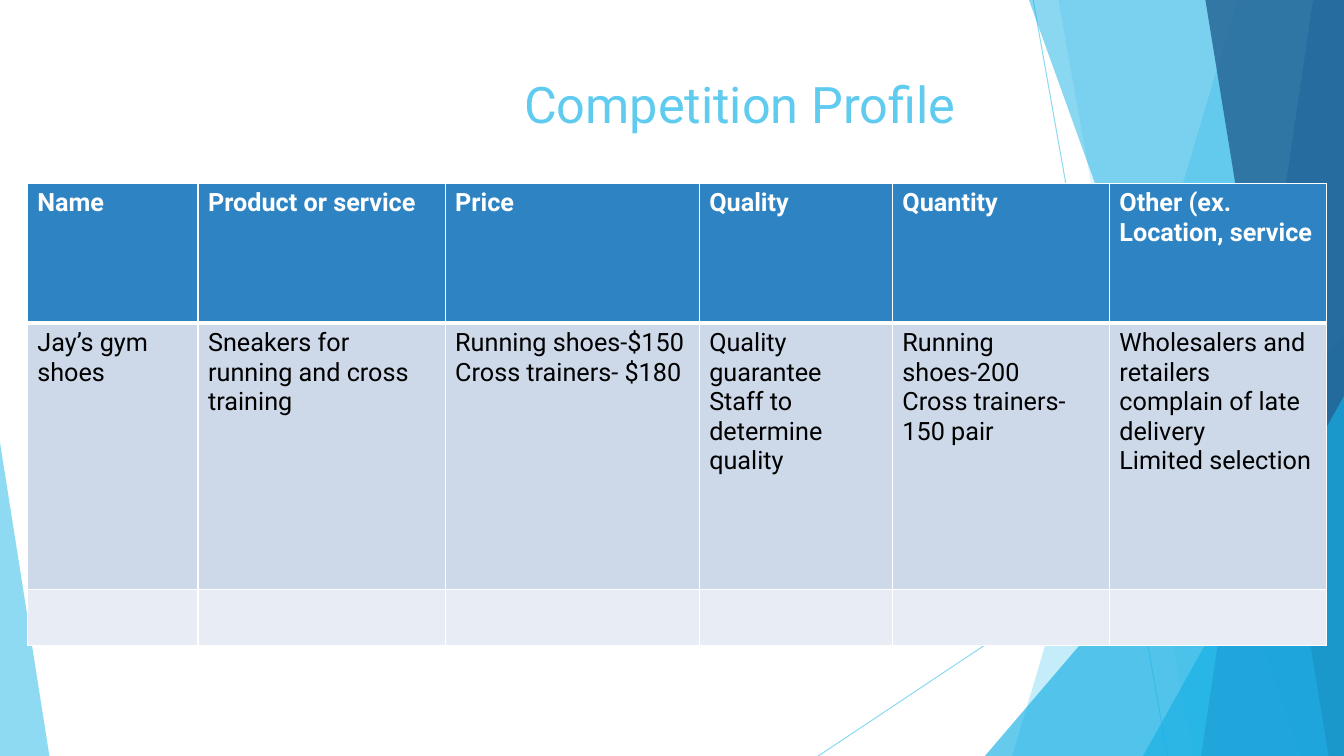
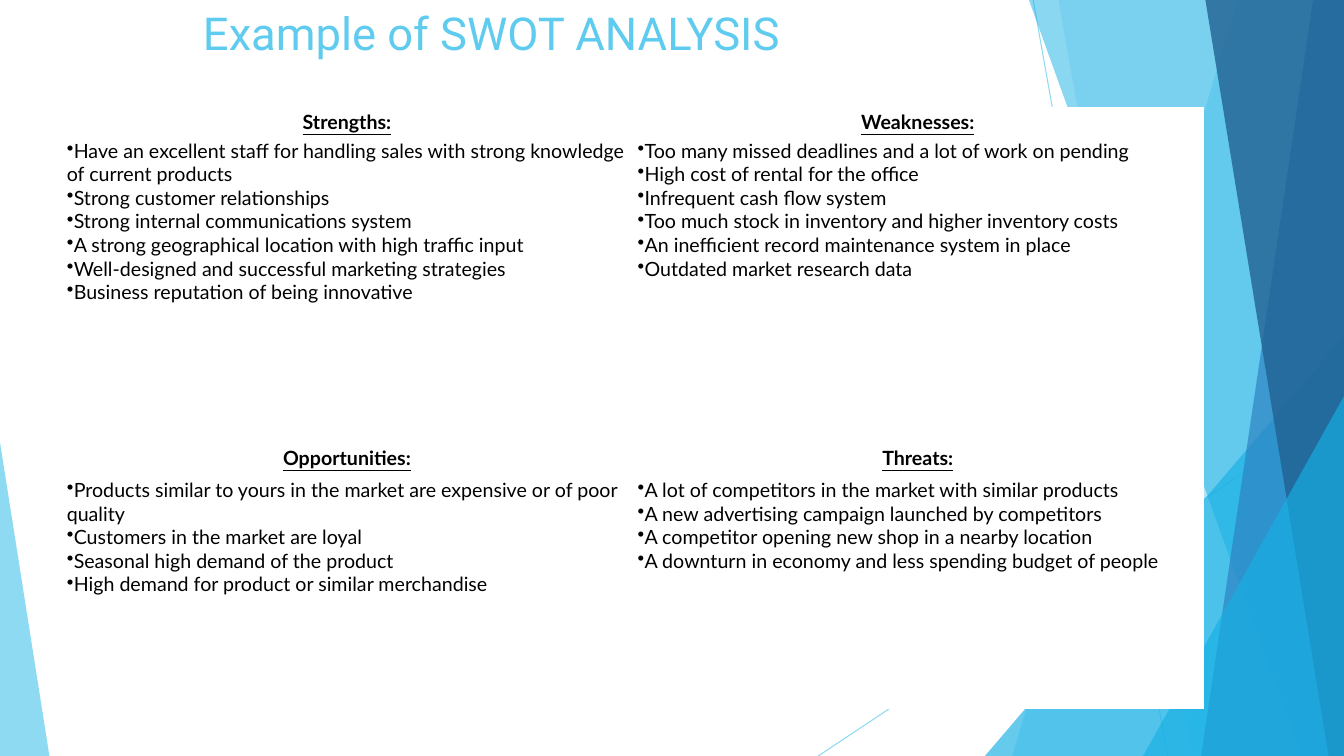
from lxml import etree
from pptx import Presentation
from pptx.dml.color import RGBColor
from pptx.enum.shapes import MSO_CONNECTOR, MSO_SHAPE
from pptx.enum.text import MSO_ANCHOR, PP_ALIGN
from pptx.oxml.ns import qn
from pptx.util import Pt

STRAIGHT = MSO_CONNECTOR.STRAIGHT
TRIANGLE = MSO_SHAPE.ISOSCELES_TRIANGLE
TOP = MSO_ANCHOR.TOP
LEFT, CENTER = PP_ALIGN.LEFT, PP_ALIGN.CENTER

WIDTH, HEIGHT = 960, 540
COLORS = {
    "sky": "5FCBEF",
    "cyan": "17B0E4",
    "blue": "2E83C3",
    "navy": "226292",
    "band": "CDD9E9",
    "pale": "E8EDF5",
    "white": "FFFFFF",
    "black": "000000",
}
TITLE_FONT, SWOT_FONT = "Roboto", "Lato"

RAYS = [(738, 0, 834, HEIGHT), (WIDTH, 290, 584.5, HEIGHT)]
FACETS = [
    ("shard", (884, 723), "sky", 36),
    ("shard", (756, 852), "sky", 20),
    ("triangle", (703.5, 240, 256.5, 300, 1), "cyan", 66),
    ("shard", (735, 929.5), "cyan", 50),
    ("shard", (938, 858), "blue", 70),
    ("shard", (861, 949), "navy", 80),
    ("triangle", (816.5, 283, 143.5, 257, 1), "cyan", 66),
    ("triangle", (0, 316, 35.3, 224, 0), "sky", 70),
]

COMPETITION_COLS = [122, 176.5, 181.5, 138, 155, 155]
COMPETITION_ROWS = [
    (100, "blue", [
        "Name", "Product or service", "Price", "Quality", "Quantity",
        "Other (ex. Location, service",
    ]),
    (190, "band", [
        "Jay’s gym shoes",
        "Sneakers for running and cross training",
        "Running shoes-$150\nCross trainers- $180",
        "Quality guarantee\nStaff to determine quality",
        "Running shoes-200\nCross trainers- 150 pair",
        "Wholesalers and retailers complain of late delivery\nLimited selection",
    ]),
    (40.4, "pale", [""] * 6),
]

SWOT_ROWS = [
    (20.5, ["Strengths:", "Weaknesses:"]),
    (219.5, [
        "Have an excellent staff for handling sales with strong knowledge of current products\n"
        "Strong customer relationships\n"
        "Strong internal communications system\n"
        "A strong geographical location with high traffic input\n"
        "Well-designed and successful marketing strategies\n"
        "Business reputation of being innovative",
        "Too many missed deadlines and a lot of work on pending\n"
        "High cost of rental for the office\n"
        "Infrequent cash flow system\n"
        "Too much stock in inventory and higher inventory costs\n"
        "An inefficient record maintenance system in place\n"
        "Outdated market research data",
    ]),
    (23, ["Opportunities:", "Threats:"]),
    (166.5, [
        "Products similar to yours in the market are expensive or of poor quality\n"
        "Customers in the market are loyal\n"
        "Seasonal high demand of the product\n"
        "High demand for product or similar merchandise",
        "A lot of competitors in the market with similar products\n"
        "A new advertising campaign launched by competitors\n"
        "A competitor opening new shop in a nearby location\n"
        "A downturn in economy and less spending budget of people",
    ]),
]


def rgb(name):
    return RGBColor.from_string(COLORS[name])


def set_alpha(sp, percent):
    for clr in sp.element.spPr.iter(qn("a:srgbClr")):
        etree.SubElement(clr, qn("a:alpha")).set("val", str(percent * 1000))


def style_text(tf, font, size, color, align=LEFT, bold=False, underline=False):
    for p in tf.paragraphs:
        p.alignment = align
        for r in p.runs:
            r.font.name = font
            r.font.size = Pt(size)
            r.font.color.rgb = rgb(color)
            r.font.bold = bold
            r.font.underline = underline


def add_ray(slide, x1, y1, x2, y2):
    line = slide.shapes.add_connector(STRAIGHT, Pt(x1), Pt(y1), Pt(x2), Pt(y2))
    line.line.color.rgb = rgb("sky")
    line.line.width = Pt(0.75)
    set_alpha(line, 70)
    etree.SubElement(line.element.spPr, qn("a:effectLst"))


def add_shard(slide, top_x, bottom_x):
    builder = slide.shapes.build_freeform(Pt(top_x), 0)
    corners = [(WIDTH, 0), (WIDTH, HEIGHT), (bottom_x, HEIGHT)]
    builder.add_line_segments([(Pt(x), Pt(y)) for x, y in corners], close=True)
    return builder.convert_to_shape()


def add_triangle(slide, x, y, w, h, apex):
    sp = slide.shapes.add_shape(TRIANGLE, Pt(x), Pt(y), Pt(w), Pt(h))
    sp.adjustments[0] = apex
    return sp


def add_backdrop(slide):
    makers = {"shard": add_shard, "triangle": add_triangle}
    for ray in RAYS:
        add_ray(slide, *ray)
    for kind, geometry, color, opacity in FACETS:
        sp = makers[kind](slide, *geometry)
        sp.shadow.inherit = False
        sp.fill.solid()
        sp.fill.fore_color.rgb = rgb(color)
        sp.line.fill.background()
        set_alpha(sp, opacity)


def add_title(slide, text, box, size):
    tf = slide.shapes.add_textbox(*map(Pt, box)).text_frame
    tf.word_wrap = True
    tf.vertical_anchor = TOP
    tf.text = text
    style_text(tf, TITLE_FONT, size, "sky", CENTER)


def add_grid(slide, x, y, col_widths, row_heights):
    table = slide.shapes.add_table(
        len(row_heights), len(col_widths), Pt(x), Pt(y),
        Pt(sum(col_widths)), Pt(sum(row_heights))).table
    table.first_row = table.horz_banding = False
    for col, w in zip(table.columns, col_widths):
        col.width = Pt(w)
    for row, h in zip(table.rows, row_heights):
        row.height = Pt(h)
    return table


def fill_cell(cell, text, color):
    cell.fill.solid()
    cell.fill.fore_color.rgb = rgb(color)
    cell.text_frame.text = text


def set_borders(cell, top, bottom):
    tc_pr = cell._tc.get_or_add_tcPr()
    sides = [("lnL", 1), ("lnR", 1), ("lnT", top), ("lnB", bottom)]
    for i, (side, width) in enumerate(sides):
        ln = etree.Element(qn("a:" + side), w=str(Pt(width)))
        solid = etree.SubElement(ln, qn("a:solidFill"))
        etree.SubElement(solid, qn("a:srgbClr")).set("val", COLORS["white"])
        tc_pr.insert(i, ln)


def add_bullets(tf):
    for p in tf.paragraphs:
        p_pr = p._p.get_or_add_pPr()
        p_pr.set("marL", "0")
        p_pr.set("indent", "0")
        etree.SubElement(p_pr, qn("a:buChar")).set("char", "•")


def add_competition_table(slide, x, y):
    heights = [h for h, _, _ in COMPETITION_ROWS]
    table = add_grid(slide, x, y, COMPETITION_COLS, heights)
    for i, (_, color, texts) in enumerate(COMPETITION_ROWS):
        header = i == 0
        for j, text in enumerate(texts):
            cell = table.cell(i, j)
            fill_cell(cell, text, color)
            set_borders(cell, 3 if i == 1 else 1, 3 if header else 1)
            style_text(cell.text_frame, TITLE_FONT, 18,
                       "white" if header else "black", bold=header)


def add_swot_table(slide, x, y, w):
    table = add_grid(slide, x, y, [w / 2] * 2, [h for h, _ in SWOT_ROWS])
    for i, (_, texts) in enumerate(SWOT_ROWS):
        heading = i % 2 == 0
        for j, text in enumerate(texts):
            cell = table.cell(i, j)
            fill_cell(cell, text, "white")
            cell.margin_left = cell.margin_right = Pt(3.75)
            cell.margin_top = cell.margin_bottom = Pt(2)
            tf = cell.text_frame
            style_text(tf, SWOT_FONT, 14, "black", CENTER if heading else LEFT,
                       heading, heading)
            if not heading:
                add_bullets(tf)


def add_slide(prs):
    slide = prs.slides.add_slide(prs.slide_layouts[6])
    add_backdrop(slide)
    return slide


def build_competition(prs):
    s = add_slide(prs)
    add_title(s, "Competition Profile", (150.5, 49, 756, 101), 36)
    add_competition_table(s, 19.5, 131)


def build_swot(prs):
    s = add_slide(prs)
    add_title(s, "Example of SWOT ANALYSIS", (0, 0, 702, 45), 32.4)
    add_swot_table(s, 44, 76.5, 815.5)


def main():
    prs = Presentation()
    prs.slide_width, prs.slide_height = Pt(WIDTH), Pt(HEIGHT)
    build_competition(prs)
    build_swot(prs)
    prs.save("out.pptx")


if __name__ == "__main__":
    main()
